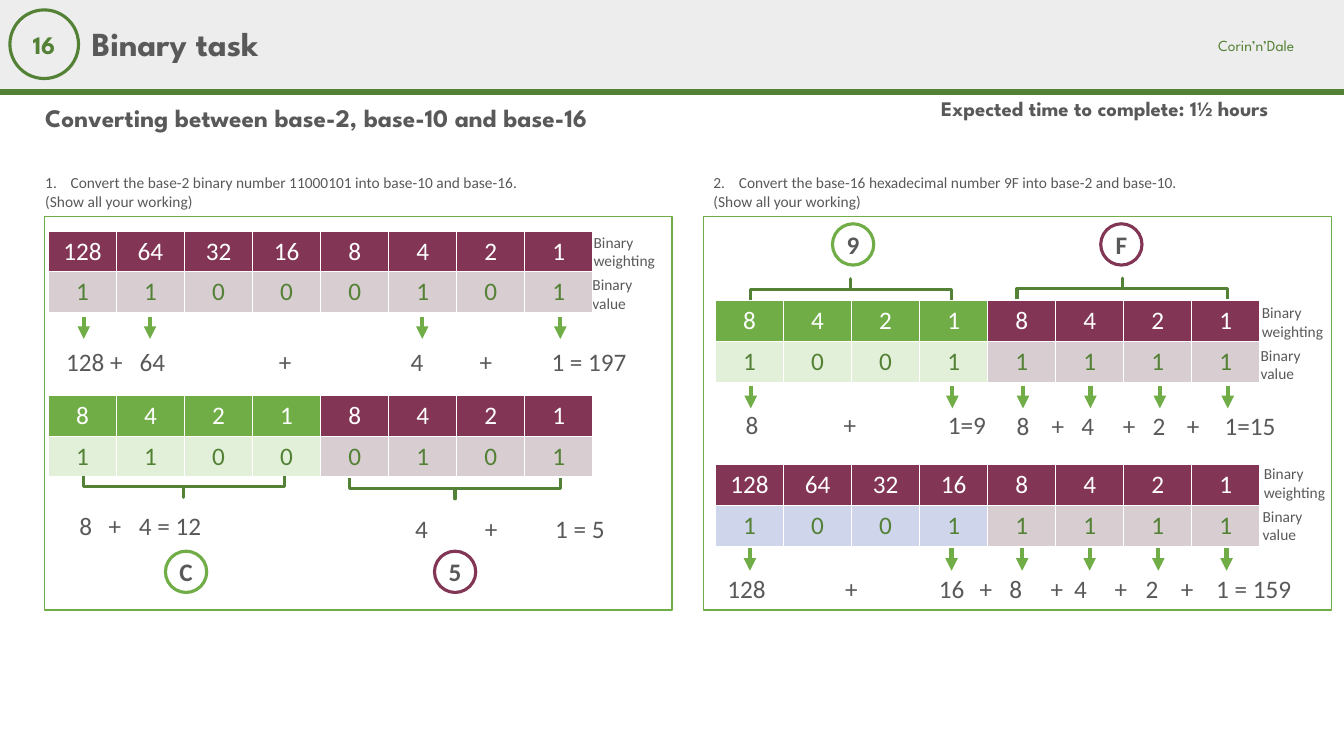
from lxml import etree
from pptx import Presentation
from pptx.dml.color import RGBColor
from pptx.enum.shapes import MSO_CONNECTOR, MSO_SHAPE
from pptx.enum.text import MSO_ANCHOR, PP_ALIGN
from pptx.oxml.ns import qn
from pptx.util import Cm, Pt

STRAIGHT = MSO_CONNECTOR.STRAIGHT
RECTANGLE, OVAL, BRACE = MSO_SHAPE.RECTANGLE, MSO_SHAPE.OVAL, MSO_SHAPE.RIGHT_BRACE
TOP, MIDDLE = MSO_ANCHOR.TOP, MSO_ANCHOR.MIDDLE
LEFT, CENTER = PP_ALIGN.LEFT, PP_ALIGN.CENTER

WHITE = RGBColor(0xFF, 0xFF, 0xFF)
GREY = RGBColor(0x59, 0x59, 0x59)
HEADER_GREY = RGBColor(0xED, 0xED, 0xED)
DARK_GREEN = RGBColor(0x53, 0x81, 0x35)
GREEN = RGBColor(0x70, 0xAD, 0x47)
PALE_GREEN = RGBColor(0xE2, 0xF0, 0xD9)
PLUM = RGBColor(0x82, 0x35, 0x54)
PALE_PLUM = RGBColor(0xD8, 0xCE, 0xD1)
PALE_BLUE = RGBColor(0xCF, 0xD5, 0xEA)
HEADING_FONT = "League Spartan"


def write_text(holder, text, size=18, color=GREY, font="Calibri", bold=False,
               align=LEFT, anchor=TOP, spacing=None, number=None, tab_stops=()):
    """Fill a shape or a table cell with formatted text, one paragraph a line."""
    holder.text_frame.word_wrap = True
    holder.vertical_anchor = anchor if hasattr(holder, "vertical_anchor") else None
    holder.text_frame.vertical_anchor = anchor
    for index, line in enumerate(text.split("\n")):
        frame = holder.text_frame
        paragraph = frame.add_paragraph() if index else frame.paragraphs[0]
        properties = paragraph._p.get_or_add_pPr()
        if number and index == 0:
            properties.set("marL", str(Cm(0.64)))
            properties.set("indent", str(-Cm(0.64)))
            etree.SubElement(properties, qn("a:buAutoNum"),
                             type="arabicPeriod", startAt=str(number))
        if tab_stops:
            tab_list = etree.SubElement(properties, qn("a:tabLst"))
            for stop in tab_stops:
                etree.SubElement(tab_list, qn("a:tab"), pos=str(Cm(stop)), algn="l")
        paragraph.alignment = align
        paragraph.line_spacing = spacing
        run = paragraph.add_run()
        run.text = line
        run.font.size, run.font.bold, run.font.name = Pt(size), bold, font
        run.font.color.rgb = color


def draw_line(left, top, right, bottom, color, width, arrow=False):
    connector = slide.shapes.add_connector(STRAIGHT, Cm(left), Cm(top), Cm(right), Cm(bottom))
    connector.line.color.rgb = color
    connector.line.width = Pt(width)
    if arrow:
        etree.SubElement(connector.line._get_or_add_ln(), qn("a:tailEnd"), type="triangle")
    etree.SubElement(connector._element.spPr, qn("a:effectLst"))


presentation = Presentation()
presentation.slide_width, presentation.slide_height = Cm(33.87), Cm(19.05)
slide = presentation.slides.add_slide(presentation.slide_layouts[6])

# Header band
band = slide.shapes.add_shape(RECTANGLE, 0, 0, presentation.slide_width, Cm(2.31))
band.shadow.inherit = False
band.fill.solid()
band.fill.fore_color.rgb = HEADER_GREY
band.line.fill.background()
draw_line(0, 2.31, 33.87, 2.31, DARK_GREEN, 4.5)

# Headings, questions and table labels
heading = {"font": HEADING_FONT, "bold": True, "spacing": 0.9}
texts = [
    ("Corin’n’Dale", 30.45, 0.79, 3.3, 0.74,
     {"size": 11, "font": HEADING_FONT, "color": DARK_GREEN}),
    ("Expected time to complete: 1½ hours", 23.47, 2.36, 10.39, 1.02, {"size": 14.8, **heading}),
    ("Converting between base-2, base-10 and base-16", 0.89, 2.51, 21.41, 1.02,
     {"size": 18, "anchor": MIDDLE, **heading}),
    ("Binary task", 2.06, 0.23, 26.19, 1.85, {"size": 24, "anchor": MIDDLE, **heading}),
    ("Convert the base-2 binary number 11000101 into base-10 and base-16.\n"
     "(Show all your working)", 0.89, 4.24, 15.75, 1.19, {"size": 11, "number": 1}),
    ("Convert the base-16 hexadecimal number 9F into base-2 and base-10.\n"
     "(Show all your working)", 17.73, 4.24, 15.75, 1.19, {"size": 11, "number": 2}),
]
for left, top in [(14.71, 5.74), (31.55, 7.52), (31.6, 11.58)]:
    texts.append(("Binary weighting", left, top, 2.25, 1.19, {"size": 11}))
    texts.append(("Binary value", left - 0.03, top + 1.07, 2.25, 1.19, {"size": 11}))
for text, left, top, width, height, text_format in texts:
    box = slide.shapes.add_textbox(Cm(left), Cm(top), Cm(width), Cm(height))
    write_text(box, text, **text_format)

# Binary tables: colours are (weighting, value) for the left and right four columns
plum, green, blue = (PLUM, PALE_PLUM), (GREEN, PALE_GREEN), (PLUM, PALE_BLUE)
byte_weights = [128, 64, 32, 16, 8, 4, 2, 1]
nibble_weights = [8, 4, 2, 1] * 2
tables = [
    (1.22, 5.82, byte_weights, "11000101", plum, plum),
    (1.22, 9.96, nibble_weights, "11000101", green, plum),
    (18.03, 7.57, nibble_weights, "10011111", green, plum),
    (18.03, 11.71, byte_weights, "10011111", blue, plum),
]
for left, top, weights, bits, left_colors, right_colors in tables:
    table = slide.shapes.add_table(2, 8, Cm(left), Cm(top), Cm(13.72), Cm(2.06)).table
    table.first_row = table.horz_banding = False
    for row, values in enumerate([weights, bits]):
        for column, value in enumerate(values):
            cell = table.cell(row, column)
            write_text(cell, str(value), color=DARK_GREEN if row else WHITE, align=CENTER)
            cell.fill.solid()
            cell.fill.fore_color.rgb = (left_colors if column < 4 else right_colors)[row]
            for position, side in enumerate(["a:lnL", "a:lnR", "a:lnT", "a:lnB"]):
                border = etree.Element(qn(side), w=str(Pt(1)))
                fill = etree.SubElement(border, qn("a:solidFill"))
                etree.SubElement(fill, qn("a:srgbClr"), val=str(WHITE))
                cell._tc.get_or_add_tcPr().insert(position, border)

# Sums: terms stand at tab stops measured from the first term
sums = [
    (1.42, 8.61, 15.8, ["128 +", "64", "+", "4", "+", "1 = 197"], [1.85, 5.36, 8.68, 10.42, 12.23]),
    (1.75, 12.73, 4.2, ["8", "+", "4 = 12"], [0.74, 1.5]),
    (10.21, 12.8, 5.84, ["4", "+", "1 = 5"], [1.76, 3.53]),
    (18.54, 10.19, 6.88, ["8", "+", "1=9"], [2.47, 5.1]),
    (25.37, 10.21, 7.9, ["8", "+", "4", "+", "2", "+", "1=15"],
     [0.88, 1.63, 2.68, 3.43, 4.29, 5.24]),
    (18.08, 14.33, 15.19, ["128", "+", "16", "+", "8", "+", "4", "+", "2", "+", "1 = 159"],
     [2.97, 5.33, 6.36, 7.11, 8.15, 8.74, 9.76, 10.54, 11.43, 12.32]),
]
for left, top, width, terms, stops in sums:
    box = slide.shapes.add_textbox(Cm(left), Cm(top), Cm(width), Cm(1.02))
    write_text(box, "\t".join(terms), tab_stops=stops)

# Arrows from the set bits to the sums
arrow_rows = [
    (7.98, [2.11, 3.78, 10.64, 14.12]),
    (9.73, [18.92, 24, 25.78, 27.48, 29.23, 30.94]),
    (13.82, [18.9, 23.98, 25.76, 27.46, 29.19, 30.91]),
]
for top, centers in arrow_rows:
    for center in centers:
        draw_line(center, top, center, top + 0.56, GREEN, 3, arrow=True)

# Braces around each group of four bits
braces = [(4.37, 9.73, 5.08, 90), (11.2, 9.65, 5.31, 90),
          (21.18, 4.75, 5.08, 270), (28.02, 4.62, 5.31, 270)]
for left, top, length, rotation in braces:
    brace = slide.shapes.add_shape(BRACE, Cm(left), Cm(top), Cm(0.53), Cm(length))
    brace.shadow.inherit = False
    brace.adjustments[0], brace.adjustments[1] = 0, 0.5
    brace.rotation = rotation
    brace.fill.background()
    brace.line.color.rgb = DARK_GREEN
    brace.line.width = Pt(2.25)

# Circled digits and slide number
circles = [
    ("16", 0.25, 0.25, 1.73, DARK_GREEN, DARK_GREEN, HEADING_FONT),
    ("C", 4.17, 13.89, 1.04, GREEN, GREY, "Calibri"),
    ("5", 10.95, 13.89, 1.04, PLUM, GREY, "Calibri"),
    ("9", 20.98, 5.64, 1.04, GREEN, GREY, "Calibri"),
    ("F", 27.74, 5.64, 1.04, PLUM, GREY, "Calibri"),
]
for text, left, top, diameter, line_color, text_color, font in circles:
    circle = slide.shapes.add_shape(OVAL, Cm(left), Cm(top), Cm(diameter), Cm(diameter))
    circle.shadow.inherit = False
    circle.fill.background()
    circle.line.color.rgb = line_color
    circle.line.width = Pt(2.25)
    circle.text_frame.margin_left = circle.text_frame.margin_right = 0
    write_text(circle, text, color=text_color, font=font, bold=True, align=CENTER, anchor=MIDDLE)

# Answer panels
for left in [1.12, 17.73]:
    panel = slide.shapes.add_shape(RECTANGLE, Cm(left), Cm(5.46), Cm(15.82), Cm(9.91))
    panel.shadow.inherit = False
    panel.fill.background()
    panel.line.color.rgb = GREEN
    panel.line.width = Pt(1)

presentation.save("out.pptx")
